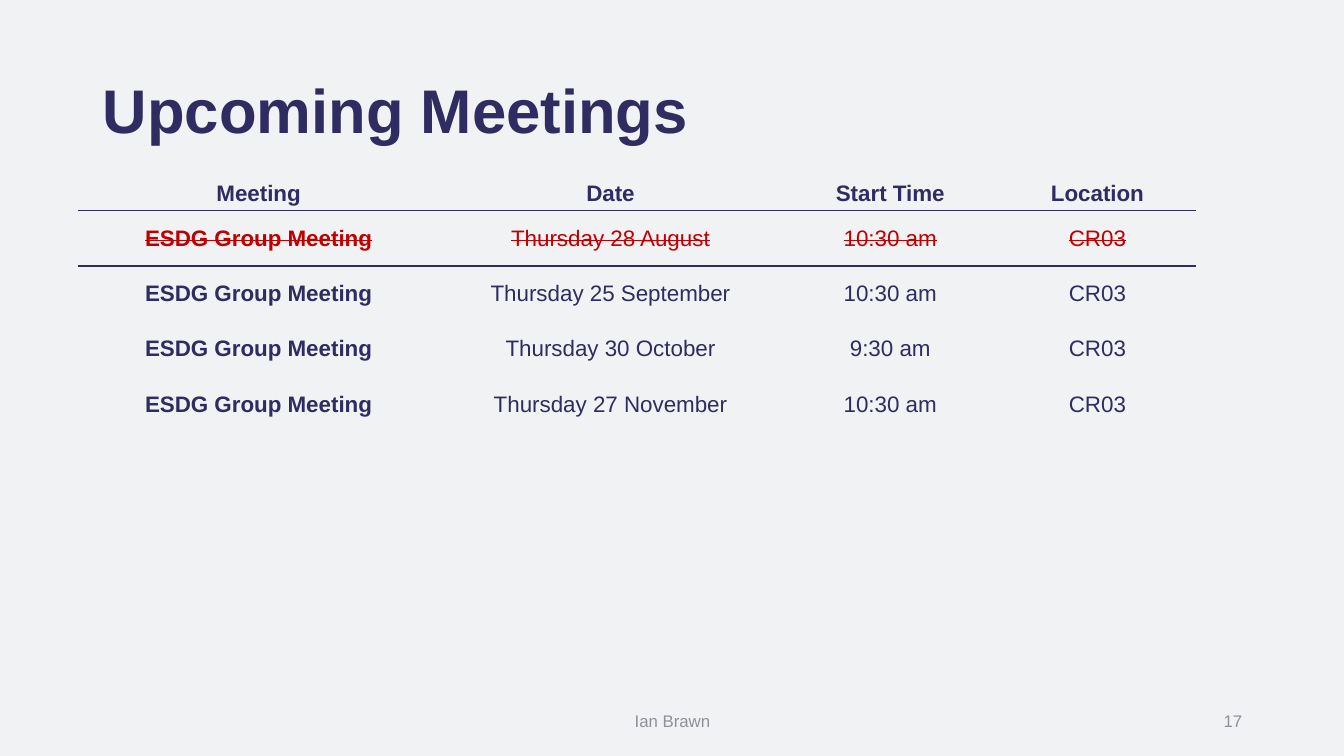
from lxml import etree
from pptx import Presentation
from pptx.dml.color import RGBColor
from pptx.enum.text import MSO_ANCHOR, PP_ALIGN
from pptx.oxml.ns import qn
from pptx.util import Inches, Pt

LEFT, CENTER, RIGHT = PP_ALIGN.LEFT, PP_ALIGN.CENTER, PP_ALIGN.RIGHT
MIDDLE = MSO_ANCHOR.MIDDLE
NAVY = RGBColor(0x2E, 0x2C, 0x61)
RED = RGBColor(0xC0, 0x00, 0x00)
GREY = RGBColor(0x8F, 0x8F, 0x9E)
PAPER = RGBColor(0xF1, 0xF2, 0xF3)
PLAIN_TABLE = "{2D5ABB26-0587-4C30-8999-92F81FD0307C}"

MEETINGS = [
    ("Meeting", "Date", "Start Time", "Location"),
    ("ESDG Group Meeting", "Thursday 28 August", "10:30 am", "CR03"),
    ("ESDG Group Meeting", "Thursday 25 September", "10:30 am", "CR03"),
    ("ESDG Group Meeting", "Thursday 30 October", "9:30 am", "CR03"),
    ("ESDG Group Meeting", "Thursday 27 November", "10:30 am", "CR03"),
]
HEADER_ROW, PAST_ROW = 0, 1
COLUMN_WIDTHS = (3.59, 3.39, 2.16, 1.95)
ROW_HEIGHTS = (0.34,) + (0.55,) * 4


def write(frame, text, size, color, align, bold=False):
    frame.text = text
    paragraph = frame.paragraphs[0]
    paragraph.alignment = align
    font = paragraph.font
    font.name, font.size, font.bold = "Arial", Pt(size), bold
    font.color.rgb = color
    return paragraph


def add_rule(cell, side):
    line = etree.SubElement(cell._tc.get_or_add_tcPr(), qn(side), w=str(Pt(1)))
    fill = etree.SubElement(line, qn("a:solidFill"))
    etree.SubElement(fill, qn("a:srgbClr"), val=str(NAVY))


prs = Presentation()
prs.slide_width, prs.slide_height = Inches(13.33), Inches(7.5)
slide = prs.slides.add_slide(prs.slide_layouts[5])
slide.background.fill.solid()
slide.background.fill.fore_color.rgb = PAPER

# Title
title = slide.shapes.title
title.left, title.top = Inches(0.92), Inches(0.4)
title.width, title.height = Inches(11.5), Inches(1.45)
title.text_frame.vertical_anchor = MIDDLE
heading = write(title.text_frame, "Upcoming Meetings", 44, NAVY, LEFT, True)
heading.line_spacing = 0.9

# Meeting schedule
schedule = slide.shapes.add_table(
    len(MEETINGS), len(COLUMN_WIDTHS), Inches(0.77), Inches(1.75),
    Inches(sum(COLUMN_WIDTHS)), Inches(sum(ROW_HEIGHTS))).table
schedule.first_row = True
schedule.horz_banding = False
schedule._tbl.tblPr.find(qn("a:tableStyleId")).text = PLAIN_TABLE
for column, width in zip(schedule.columns, COLUMN_WIDTHS):
    column.width = Inches(width)
for row, height in zip(schedule.rows, ROW_HEIGHTS):
    row.height = Inches(height)

for r, meeting in enumerate(MEETINGS):
    for c, entry in enumerate(meeting):
        cell = schedule.cell(r, c)
        cell.vertical_anchor = MIDDLE
        cell.margin_left = cell.margin_right = Inches(0.03)
        cell.margin_top = cell.margin_bottom = Inches(0.03)
        label = write(cell.text_frame, entry, 16, RED if r == PAST_ROW else NAVY,
                      CENTER, r == HEADER_ROW or c == 0)
        if r == HEADER_ROW:
            add_rule(cell, "a:lnB")
        elif r == PAST_ROW:
            add_rule(cell, "a:lnT")
            label.runs[0]._r.get_or_add_rPr().set("strike", "sngStrike")
        cell.fill.background()

# Footer: presenter and page number
for text, left, width, align in (("Ian Brawn", 4.42, 4.5, CENTER),
                                 ("17", 9.42, 3, RIGHT)):
    footer = slide.shapes.add_textbox(
        Inches(left), Inches(6.95), Inches(width), Inches(0.4)).text_frame
    footer.word_wrap = True
    footer.vertical_anchor = MIDDLE
    write(footer, text, 12, GREY, align)

prs.save("out.pptx")
